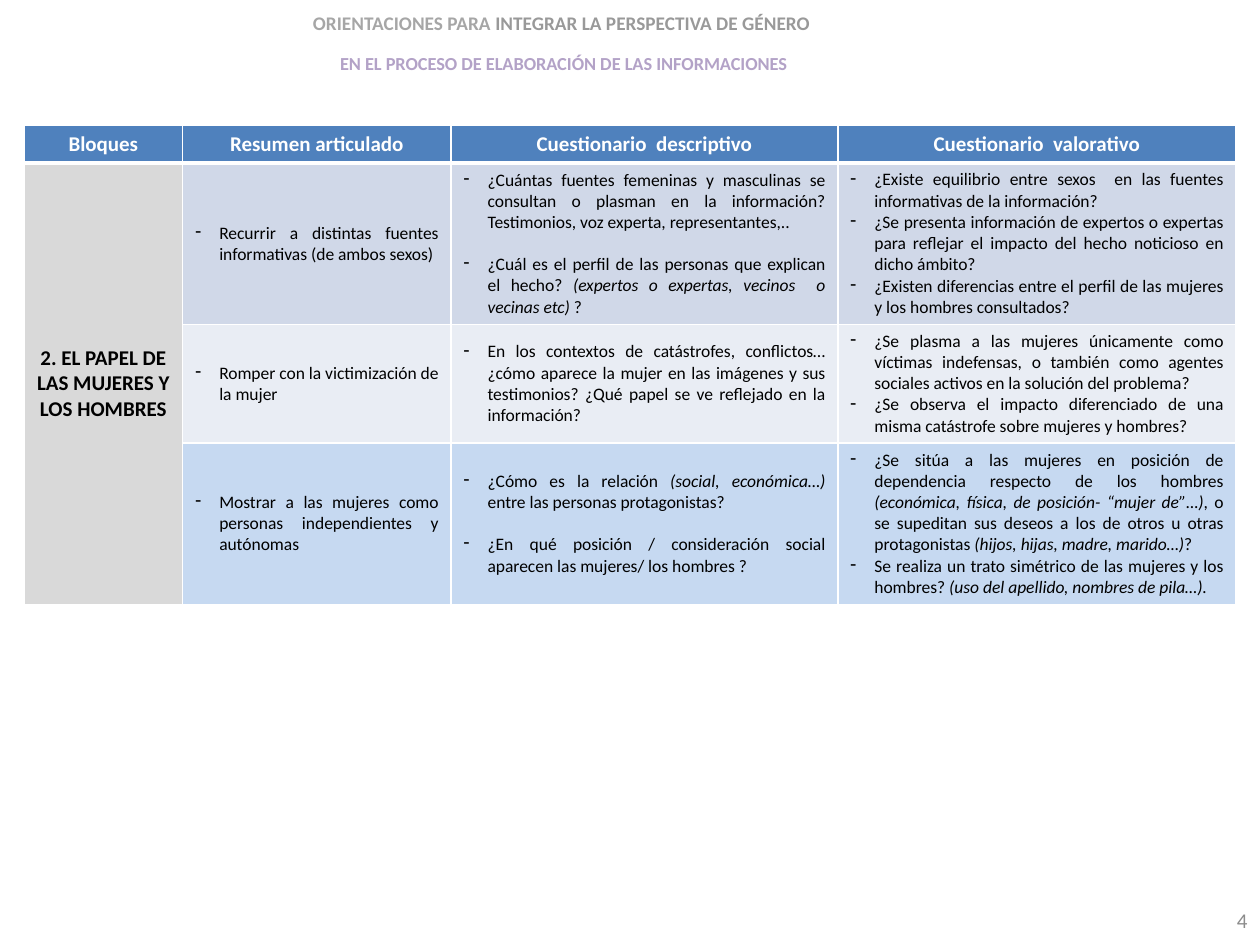
from lxml import etree
from pptx import Presentation
from pptx.dml.color import RGBColor
from pptx.enum import text
from pptx.oxml.ns import qn
from pptx.util import Inches, Pt

FONT = "Calibri"
COLORS = {
    "white": "FFFFFF", "black": "000000", "header": "4F81BD", "block": "D9D9D9",
    "title_light": "A6A6A6", "title_dark": "999999", "subtitle": "B3A2C7",
    "page": "8C8C8C",
}
ROW_FILLS = ["D0D8E8", "E9EDF4", "C6D9F1"]
COL_WIDTHS = [1.26, 2.13, 3.07, 3.16]
ROW_HEIGHTS = [0.3, 1.27, 0.93, 1.27]
HEADERS = ["Bloques", "Resumen articulado", "Cuestionario  descriptivo",
           "Cuestionario  valorativo"]
BLOCK = "2. EL PAPEL DE LAS MUJERES Y LOS HOMBRES"
GAP = 12  # points between the questions of the descriptive column

# Each row holds three cells, each cell a list of questions; *marks* italics.
ROWS = [
    [
        ["Recurrir a distintas fuentes informativas (de ambos sexos)"],
        ["¿Cuántas fuentes femeninas y masculinas se consultan o plasman en la "
         "información? Testimonios, voz experta, representantes,..",
         "¿Cuál es el perfil de las personas que explican el hecho? "
         "*(expertos o expertas, vecinos  o vecinas etc) *?"],
        ["¿Existe equilibrio entre sexos  en las fuentes informativas de la "
         "información?",
         "¿Se presenta información de expertos o expertas para reflejar el "
         "impacto del hecho noticioso en dicho ámbito?",
         "¿Existen diferencias entre el perfil de las mujeres y los hombres "
         "consultados?"],
    ],
    [
        ["Romper con la victimización de la mujer"],
        ["En los contextos de catástrofes, conflictos… ¿cómo aparece la mujer en "
         "las imágenes y sus testimonios? ¿Qué papel se ve reflejado en la "
         "información?"],
        ["¿Se plasma a las mujeres únicamente como víctimas indefensas, o también "
         "como agentes sociales activos en la solución del problema?",
         "¿Se observa el impacto diferenciado de una misma catástrofe sobre "
         "mujeres y hombres?"],
    ],
    [
        ["Mostrar a las mujeres como personas independientes y autónomas"],
        ["¿Cómo es la relación *(social, económica…) *entre las personas "
         "protagonistas?",
         "¿En qué posición / consideración social aparecen las mujeres/ los "
         "hombres ?"],
        ["¿Se sitúa a las mujeres en posición de dependencia respecto de los "
         "hombres *(económica, física, de posición- “mujer de”…)*, o se supeditan "
         "sus deseos a los de otros u otras protagonistas *(hijos, hijas, madre, "
         "marido…)*?",
         "Se realiza un trato simétrico de las mujeres y los hombres?"
         "* (uso del apellido, nombres de pila…).*"],
    ],
]


def add_run(p, words, size, color, bold=False, italic=False):
    r = p.add_run()
    r.text = words
    r.font.name = FONT
    r.font.size = Pt(size)
    r.font.bold = bold
    r.font.italic = italic
    r.font.color.rgb = RGBColor.from_string(COLORS[color])


def add_dash(p):
    """Give the paragraph a hanging dash bullet."""
    pPr = p._p.get_or_add_pPr()
    pPr.set("marL", str(Inches(0.19)))
    pPr.set("indent", str(Inches(-0.19)))
    etree.SubElement(pPr, qn("a:buFontTx"))
    etree.SubElement(pPr, qn("a:buChar")).set("char", "-")


def style_cell(cell, fill, top=1, bottom=1):
    """Fill the cell and draw its white borders, with widths in points."""
    cell.vertical_anchor = text.MSO_ANCHOR.MIDDLE
    cell.fill.solid()
    cell.fill.fore_color.rgb = RGBColor.from_string(fill)
    tcPr = cell._tc.get_or_add_tcPr()
    for i, (side, width) in enumerate(zip("LRTB", [1, 1, top, bottom])):
        ln = etree.Element(qn("a:ln" + side), w=str(Pt(width)))
        solid = etree.SubElement(ln, qn("a:solidFill"))
        etree.SubElement(solid, qn("a:srgbClr")).set("val", COLORS["white"])
        tcPr.insert(i, ln)


def write_heading(cell, words, color):
    p = cell.text_frame.paragraphs[0]
    p.alignment = text.PP_ALIGN.CENTER
    add_run(p, words, 12, color, bold=True)


def write_questions(cell, questions, gap):
    tf = cell.text_frame
    for i, question in enumerate(questions):
        p = tf.add_paragraph() if i else tf.paragraphs[0]
        if i and gap:
            p.space_before = Pt(gap)
        p.alignment = text.PP_ALIGN.JUSTIFY
        add_dash(p)
        for j, part in enumerate(question.split("*")):
            if part:
                add_run(p, part, 10, "black", italic=j % 2 == 1)


def add_title(s, left, top, width, height):
    sp = s.shapes.title
    sp.left, sp.top, sp.width, sp.height = map(Inches, (left, top, width, height))
    tf = sp.text_frame
    tf.auto_size = text.MSO_AUTO_SIZE.NONE
    tf.vertical_anchor = text.MSO_ANCHOR.TOP
    lines = [
        [("ORIENTACIONES PARA ", 11, "title_light"),
         ("INTEGRAR LA PERSPECTIVA DE GÉNERO ", 11, "title_dark")],
        [("EN EL PROCESO DE ELABORACIÓN DE LAS INFORMACIONES", 10.5, "subtitle")],
    ]
    for i, line in enumerate(lines):
        p = tf.add_paragraph() if i else tf.paragraphs[0]
        p.alignment = text.PP_ALIGN.CENTER
        p.space_after = Pt(10)
        for words, size, color in line:
            add_run(p, words, size, color, bold=True)


def add_question_table(s, left, top):
    table = s.shapes.add_table(
        len(ROW_HEIGHTS), len(COL_WIDTHS), Inches(left), Inches(top),
        Inches(sum(COL_WIDTHS)), Inches(sum(ROW_HEIGHTS))).table
    for col, width in zip(table.columns, COL_WIDTHS):
        col.width = Inches(width)
    for row, height in zip(table.rows, ROW_HEIGHTS):
        row.height = Inches(height)

    for c, words in enumerate(HEADERS):
        style_cell(table.cell(0, c), COLORS["header"], bottom=3)
        write_heading(table.cell(0, c), words, "white")

    for r, (row, fill) in enumerate(zip(ROWS, ROW_FILLS), start=1):
        border = 3 if r == 1 else 1
        style_cell(table.cell(r, 0), COLORS["block"], top=border)
        for c, questions in enumerate(row, start=1):
            style_cell(table.cell(r, c), fill, top=border)
            write_questions(table.cell(r, c), questions, GAP if c == 2 else 0)

    table.cell(1, 0).merge(table.cell(len(ROWS), 0))
    write_heading(table.cell(1, 0), BLOCK, "black")


def add_page_number(s, left, top, width, height):
    sp = s.shapes.add_textbox(*map(Inches, (left, top, width, height)))
    tf = sp.text_frame
    tf.word_wrap = True
    tf.vertical_anchor = text.MSO_ANCHOR.MIDDLE
    p = tf.paragraphs[0]
    p.alignment = text.PP_ALIGN.RIGHT
    add_run(p, "4", 12, "page")


def main():
    prs = Presentation()
    prs.slide_width, prs.slide_height = Inches(10), Inches(7.5)
    s = prs.slides.add_slide(prs.slide_layouts[5])
    add_title(s, 1.06, 0.04, 6.83, 0.6)
    add_question_table(s, 0.19, 0.99)
    add_page_number(s, 7.67, 7.1, 2.33, 0.4)
    prs.save("out.pptx")


if __name__ == "__main__":
    main()
